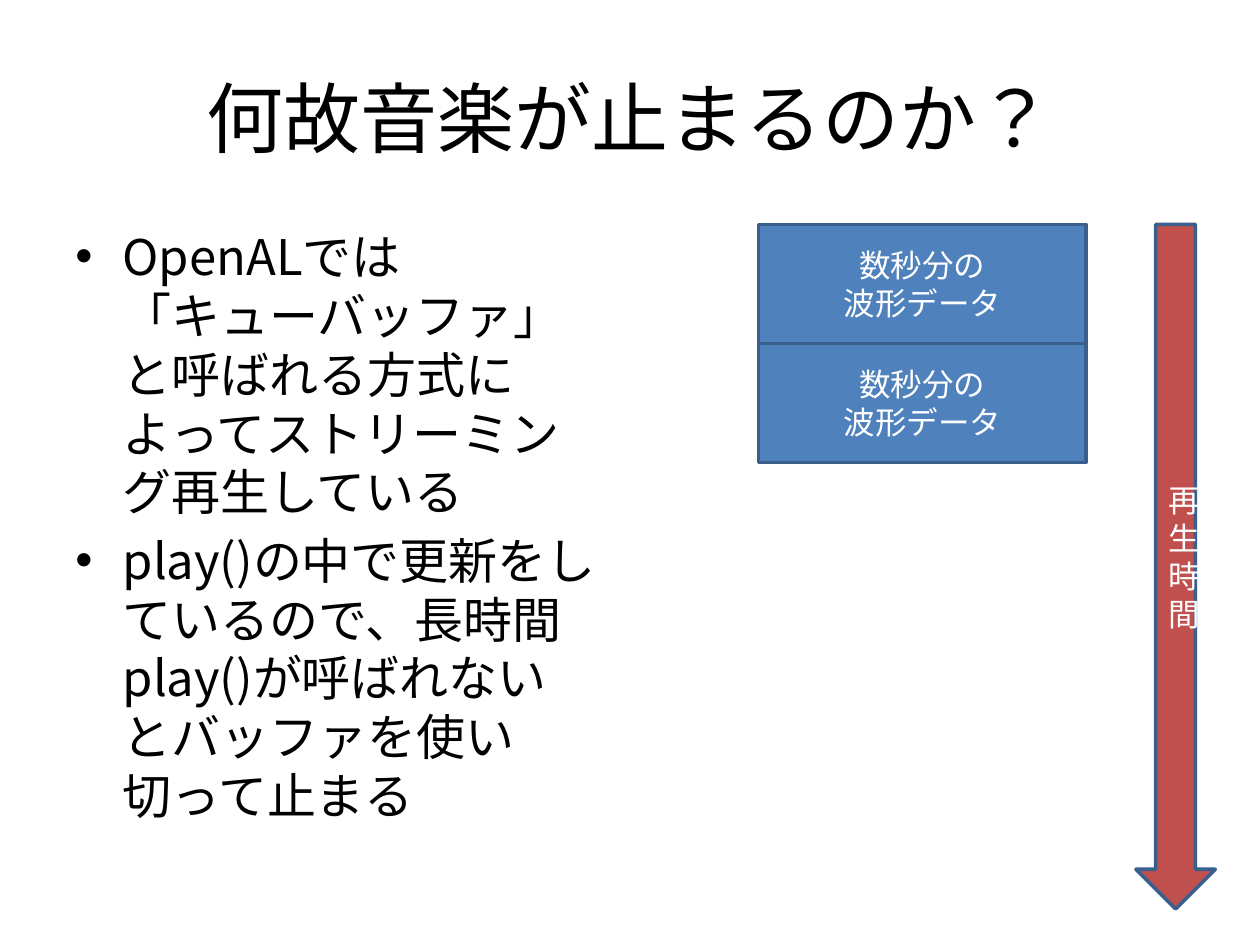
from pptx import Presentation
from pptx.dml.color import RGBColor
from pptx.enum.lang import MSO_LANGUAGE_ID as LANG
from pptx.enum.shapes import MSO_SHAPE as SHAPE
from pptx.enum.text import MSO_ANCHOR as ANCHOR, PP_ALIGN as ALIGN
from pptx.oxml.ns import qn
from pptx.util import Pt
from lxml.etree import SubElement

TITLE = "何故音楽が止まるのか？"
# \v is a line break inside a paragraph
BULLETS = [
    "OpenALでは\v「キューバッファ」\vと呼ばれる方式に\vよってストリーミング再生している",
    "play()の中で更新をしているので、長時間play()が呼ばれない\vとバッファを使い\v切って止まる",
]
BUFFERS = ["数秒分の\n波形データ"] * 2
TIME_LABEL = "再生時間"

BLACK = RGBColor(0x00, 0x00, 0x00)
WHITE = RGBColor(0xFF, 0xFF, 0xFF)
BLUE = RGBColor(0x4F, 0x81, 0xBD)
RED = RGBColor(0xC0, 0x50, 0x4D)
OUTLINE = RGBColor(0x3A, 0x5F, 0x8C)
JP_FONT = "Noto Sans CJK JP"
SHAPE_FONT = "Calibri"

DIAGRAM_TOP = 128.2
BUFFER_LEFT, BUFFER_W, BUFFER_H = 433.5, 187.2, 68.1
INDENT = 27


def format_runs(p, size, font, color):
    for r in p.runs:
        r.font.size = Pt(size)
        r.font.name = font
        r.font.color.rgb = color
        r.font.language_id = LANG.JAPANESE
        if font == JP_FONT:
            SubElement(r.font._element, qn("a:ea"), typeface=font)


def add_bullet(p):
    pPr = p._p.get_or_add_pPr()
    pPr.set("marL", str(Pt(INDENT)))
    pPr.set("indent", str(-Pt(INDENT)))
    SubElement(pPr, qn("a:buFont"), typeface="Arial")
    SubElement(pPr, qn("a:buChar"), char="•")


def add_block(s, kind, box, fill, text):
    """Add an outlined shape with centred white text."""
    sp = s.shapes.add_shape(kind, *map(Pt, box))
    sp.shadow.inherit = False
    sp.fill.solid()
    sp.fill.fore_color.rgb = fill
    sp.line.color.rgb = OUTLINE
    sp.line.width = Pt(2)
    tf = sp.text_frame
    tf.text = text
    tf.word_wrap = True
    tf.vertical_anchor = ANCHOR.MIDDLE
    for p in tf.paragraphs:
        p.alignment = ALIGN.CENTER
        format_runs(p, 18, SHAPE_FONT, WHITE)


prs = Presentation()
prs.slide_width, prs.slide_height = Pt(720), Pt(540)
s = prs.slides.add_slide(prs.slide_layouts[5])

title = s.shapes.title
title.left, title.top, title.width, title.height = map(Pt, (36, 21.6, 648, 90))
title.text_frame.text = TITLE
title.text_frame.vertical_anchor = ANCHOR.MIDDLE
p = title.text_frame.paragraphs[0]
p.alignment = ALIGN.CENTER
format_runs(p, 44, JP_FONT, BLACK)

body = s.shapes.add_textbox(*map(Pt, (36, 126, 318.2, 356.4)))
tf = body.text_frame
tf.word_wrap = True
for i, text in enumerate(BULLETS):
    p = tf.add_paragraph() if i else tf.paragraphs[0]
    p.text = text
    p.line_spacing = Pt(33.6)
    p.space_before = Pt(5.6)
    add_bullet(p)
    format_runs(p, 28, JP_FONT, BLACK)

for i, text in enumerate(BUFFERS):
    top = DIAGRAM_TOP + i * BUFFER_H
    add_block(s, SHAPE.RECTANGLE, (BUFFER_LEFT, top, BUFFER_W, BUFFER_H), BLUE, text)
add_block(s, SHAPE.DOWN_ARROW, (649.1, DIAGRAM_TOP, 45.4, 391.2), RED, TIME_LABEL)

prs.save("out.pptx")
